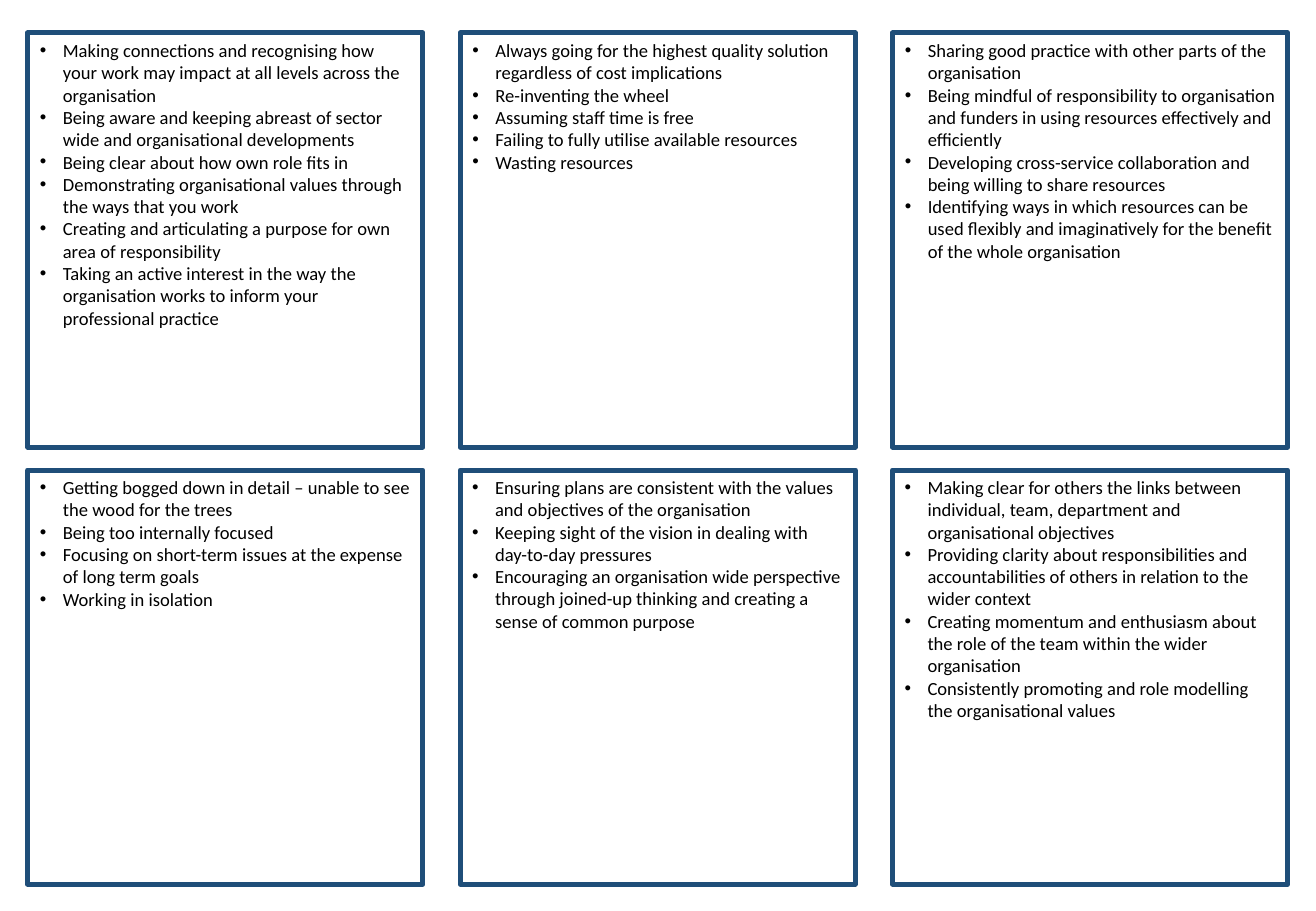
import pptx
import pptx.dml.color
import pptx.enum.shapes
import pptx.enum.text
import pptx.oxml.ns
import pptx.util
from lxml import etree
from pptx.util import Cm

NAVY = pptx.dml.color.RGBColor(0x1F, 0x4E, 0x79)
BLACK = pptx.dml.color.RGBColor(0x00, 0x00, 0x00)

# Card grid, in centimetres
COLUMNS = 3
LEFT, TOP = 0.58, 0.69
COLUMN_STEP, ROW_STEP = 9.04, 9.14
CARD_WIDTH, CARD_HEIGHT = 8.26, 8.66
LINE_HEIGHT, INSETS = 0.47, 0.25

# Behaviours on each card, row by row, with the lines they fill
CARDS = [
    (13, [
        "Making connections and recognising how your work may impact at all levels across the organisation",
        "Being aware and keeping abreast of sector wide and organisational developments",
        "Being clear about how own role fits in",
        "Demonstrating organisational values through the ways that you work",
        "Creating and articulating a purpose for own area of responsibility",
        "Taking an active interest in the way the organisation works to inform your professional practice",
    ]),
    (6, [
        "Always going for the highest quality solution regardless of cost implications",
        "Re-inventing the wheel",
        "Assuming staff time is free",
        "Failing to fully utilise available resources",
        "Wasting resources",
    ]),
    (10, [
        "Sharing good practice with other parts of the organisation",
        "Being mindful of responsibility to organisation and funders in using resources effectively and efficiently",
        "Developing cross-service collaboration and being willing to share resources",
        "Identifying ways in which resources can be used flexibly and imaginatively "
        "for the benefit of the whole organisation",
    ]),
    (6, [
        "Getting bogged down in detail – unable to see the wood for the trees",
        "Being too internally focused",
        "Focusing on short-term issues at the expense of long term goals",
        "Working in isolation",
    ]),
    (7, [
        "Ensuring plans are consistent with the values and objectives of the organisation",
        "Keeping sight of the vision in dealing with day-to-day pressures",
        "Encouraging an organisation wide perspective through joined-up thinking "
        "and creating a sense of common purpose",
    ]),
    (11, [
        "Making clear for others the links between individual, team, department and organisational objectives",
        "Providing clarity about responsibilities and accountabilities of others in relation to the wider context",
        "Creating momentum and enthusiasm about the role of the team within the wider organisation",
        "Consistently promoting and role modelling the organisational values",
    ]),
]


class CardSlide:
    """Holds the card style and the current slide."""

    font_name = "Calibri"
    font_size = pptx.util.Pt(11)
    border_width = pptx.util.Pt(3)
    indent = Cm(0.48)

    def __init__(self, deck):
        # The Comparison layout offers the most body placeholders
        self.slide = deck.slides.add_slide(deck.slide_layouts[4])
        heading = self.slide.shapes.title
        heading.element.getparent().remove(heading.element)
        self.bodies = list(self.slide.placeholders)

    def border(self, left, top):
        frame = self.slide.shapes.add_shape(
            pptx.enum.shapes.MSO_SHAPE.RECTANGLE,
            Cm(left), Cm(top), Cm(CARD_WIDTH), Cm(CARD_HEIGHT))
        frame.shadow.inherit = False
        frame.fill.background()
        frame.line.color.rgb = NAVY
        frame.line.width = self.border_width

    def behaviours(self, left, top, lines, items):
        area = Cm(left), Cm(top), Cm(CARD_WIDTH), Cm(INSETS + LINE_HEIGHT * lines)
        # Text boxes take over once the body placeholders are used up
        if self.bodies:
            body = self.bodies.pop(0)
            body.left, body.top, body.width, body.height = area
        else:
            body = self.slide.shapes.add_textbox(*area)
        text = body.text_frame
        text.word_wrap = True
        text.auto_size = pptx.enum.text.MSO_AUTO_SIZE.SHAPE_TO_FIT_TEXT
        text.vertical_anchor = pptx.enum.text.MSO_ANCHOR.TOP
        text.text = "\n".join(items)
        for item in text.paragraphs:
            self.bullet(item)

    def bullet(self, item):
        item.alignment = pptx.enum.text.PP_ALIGN.LEFT
        item.space_before = item.space_after = pptx.util.Pt(0)
        item.line_spacing = 1.0
        for run in item.runs:
            run.font.name = self.font_name
            run.font.size = self.font_size
            run.font.bold = False
            run.font.color.rgb = BLACK
        properties = item._p.get_or_add_pPr()
        properties.set("marL", str(self.indent))
        properties.set("indent", str(-self.indent))
        qn = pptx.oxml.ns.qn
        etree.SubElement(properties, qn("a:buFont")).set("typeface", "Arial")
        etree.SubElement(properties, qn("a:buChar")).set("char", "•")


def main():
    deck = pptx.Presentation()
    deck.slide_width, deck.slide_height = Cm(27.51), Cm(19.05)
    page = CardSlide(deck)

    # Six bordered cards in two rows
    for index, (lines, items) in enumerate(CARDS):
        row, column = divmod(index, COLUMNS)
        left = LEFT + column * COLUMN_STEP
        top = TOP + row * ROW_STEP
        page.border(left, top)
        page.behaviours(left, top, lines, items)

    deck.save("out.pptx")


if __name__ == "__main__":
    main()
